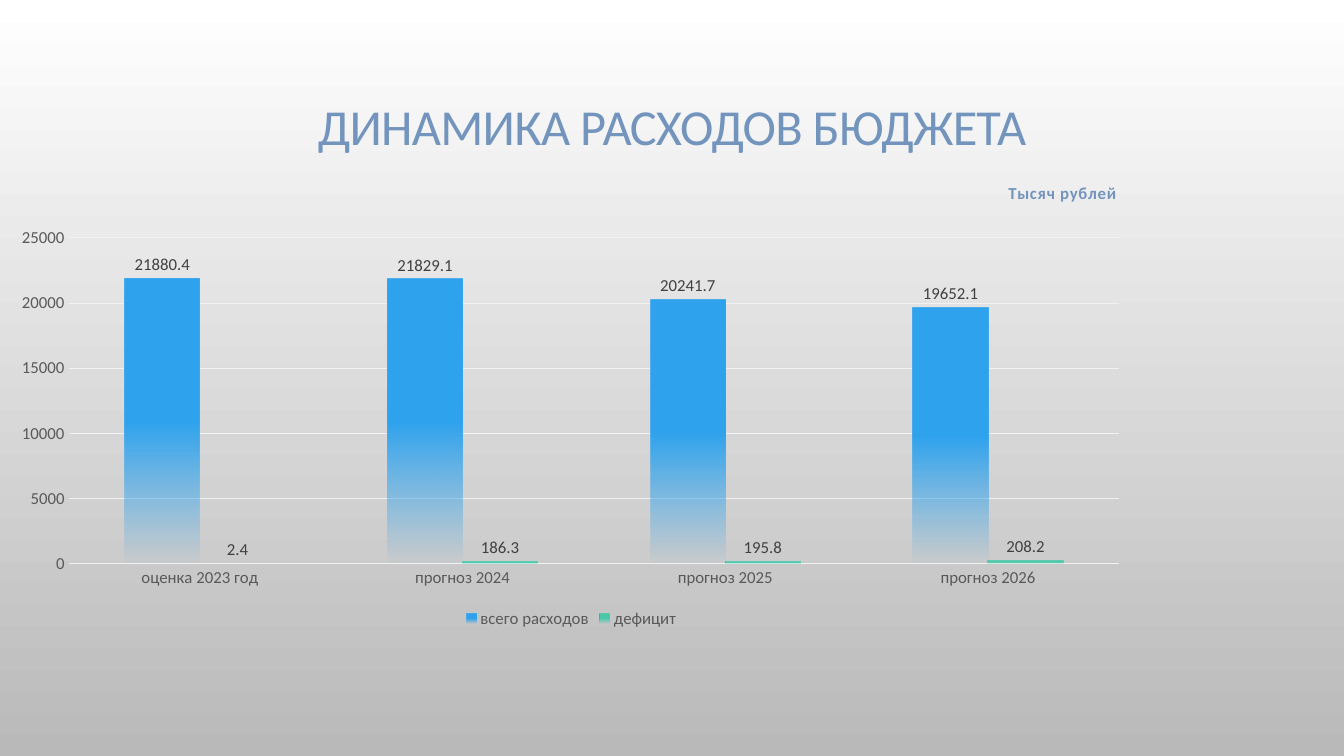
import pptx
import pptx.chart.data
import pptx.dml.color
import pptx.enum.chart
import pptx.enum.text
import pptx.oxml
import pptx.oxml.ns
import pptx.util

Pt = pptx.util.Pt
FONT = "Calibri"
COLORS = {
    "heading": "7294BD",
    "page_top": "FFFFFF",
    "page_bottom": "B9B9B9",
    "axis": "595959",
    "label": "404040",
    "grid": "F2F2F2",
    "expenses": "2FA3EE",
    "deficit": "4BCAAD",
}
YEARS = ["оценка 2023 год", "прогноз 2024", "прогноз 2025", "прогноз 2026"]
BUDGET = [
    ("всего расходов", "expenses", [21880.4, 21829.1, 20241.7, 19652.1]),
    ("дефицит", "deficit", [2.4, 186.3, 195.8, 208.2]),
]


def rgb(name):
    return pptx.dml.color.RGBColor.from_string(COLORS[name])


def style_font(font, size, color, bold=False):
    font.name = FONT
    font.size = Pt(size)
    font.bold = bold
    font.color.rgb = rgb(color)


def fill_downward(fill, start, end, start_position=0):
    fill.gradient()
    fill.gradient_angle = 270
    for stop, color, position in zip(fill.gradient_stops, (start, end), (start_position, 1)):
        stop.color.rgb = rgb(color)
        stop.position = position


def set_layout(parent, successors, **fractions):
    modes = "".join(f'<c:{key}Mode val="edge"/>' for key in "xy")
    sizes = "".join(f'<c:{key} val="{value}"/>' for key, value in fractions.items())
    target = '<c:layoutTarget val="inner"/>' if "w" in fractions else ""
    for old in parent.findall(pptx.oxml.ns.qn("c:layout")):
        parent.remove(old)
    layout = pptx.oxml.parse_xml(
        f'<c:layout {pptx.oxml.ns.nsdecls("c")}><c:manualLayout>'
        f"{target}{modes}{sizes}</c:manualLayout></c:layout>"
    )
    parent.insert(successors, layout)


def add_heading(slide, left, top, width, height):
    frame = slide.shapes.add_textbox(Pt(left), Pt(top), Pt(width), Pt(height)).text_frame
    frame.word_wrap = True
    frame.vertical_anchor = pptx.enum.text.MSO_ANCHOR.MIDDLE
    frame.margin_bottom = Pt(43)
    heading = frame.paragraphs[0]
    heading.text = "ДИНАМИКА РАСХОДОВ БЮДЖЕТА"
    heading.alignment = pptx.enum.text.PP_ALIGN.CENTER
    heading.line_spacing = 0.9
    style_font(heading.font, 36, "heading")
    heading.runs[0].font._element.set("spc", "-50")


def style_axes(chart):
    for axis in (chart.category_axis, chart.value_axis):
        axis.major_tick_mark = pptx.enum.chart.XL_TICK_MARK.NONE
        axis.minor_tick_mark = pptx.enum.chart.XL_TICK_MARK.NONE
        axis.format.line.fill.background()
        style_font(axis.tick_labels.font, 12, "axis")
    amounts = chart.value_axis
    amounts.minimum_scale = 0
    amounts.maximum_scale = 25000
    amounts.major_unit = 5000
    grid = amounts.major_gridlines.format.line
    grid.color.rgb = rgb("grid")
    grid.width = Pt(0.75)


def style_series(series, color):
    fill_downward(series.format.fill, color, color, start_position=0.5)
    series.format.line.fill.background()
    series.invert_if_negative = False
    clear_end = series._element.xpath("./c:spPr/a:gradFill/a:gsLst/a:gs[2]/a:srgbClr")[0]
    clear_end.append(
        pptx.oxml.parse_xml(f'<a:alpha {pptx.oxml.ns.nsdecls("a")} val="0"/>')
    )
    labels = series.data_labels
    labels.show_value = True
    labels.position = pptx.enum.chart.XL_LABEL_POSITION.OUTSIDE_END
    style_font(labels.font, 12, "label")


def add_budget_chart(slide, left, top, width, height):
    data = pptx.chart.data.CategoryChartData()
    data.categories = YEARS
    for name, _, values in BUDGET:
        data.add_series(name, values)
    chart = slide.shapes.add_chart(
        pptx.enum.chart.XL_CHART_TYPE.COLUMN_CLUSTERED,
        Pt(left), Pt(top), Pt(width), Pt(height), data,
    ).chart
    chart.font.name = FONT
    chart.font.size = Pt(10)

    chart.has_title = True
    unit = chart.chart_title.text_frame.paragraphs[0]
    unit.text = "Тысяч рублей"
    style_font(unit.font, 12, "heading", bold=True)
    unit.runs[0].font._element.set("spc", "50")
    chart.chart_title.include_in_layout = False
    set_layout(chart.chart_title._element, 1, x=0.88, y=0.01)

    chart.has_legend = True
    chart.legend.position = pptx.enum.chart.XL_LEGEND_POSITION.BOTTOM
    chart.legend.include_in_layout = False
    style_font(chart.legend.font, 12, "axis")

    style_axes(chart)
    columns = chart.plots[0]
    columns.gap_width = 150
    columns.overlap = 0
    columns.vary_by_categories = False
    for series, (_, color, _) in zip(columns.series, BUDGET):
        style_series(series, color)
    plot_area = chart._chartSpace.chart.plotArea
    set_layout(plot_area, 0, x=0.06, y=0.14, w=0.92, h=0.71)


def main():
    deck = pptx.Presentation()
    deck.slide_width = Pt(960)
    deck.slide_height = Pt(540)
    slide = deck.slides.add_slide(deck.slide_layouts[6])
    fill_downward(slide.background.fill, "page_top", "page_bottom")
    add_heading(slide, 72, 49, 816, 126)
    add_budget_chart(slide, 0, 124, 816, 328)
    deck.save("out.pptx")


if __name__ == "__main__":
    main()
